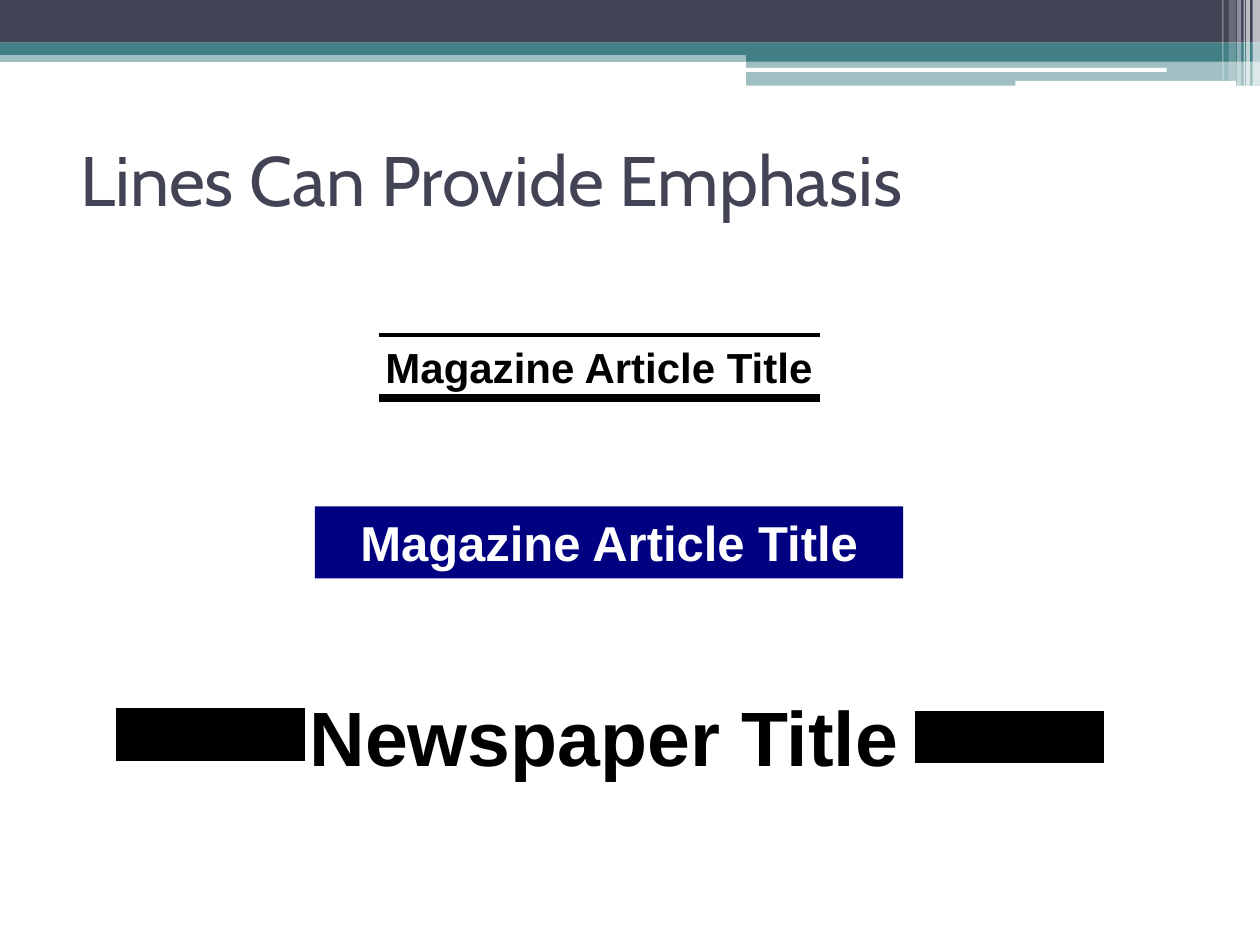
from lxml import etree
from pptx import Presentation
from pptx import util as u
from pptx.dml.color import RGBColor
from pptx.enum import shapes, text
from pptx.oxml.ns import qn

WIDTH, HEIGHT = 25.4, 19.05
SLATE, TEAL, WHITE, BLACK, NAVY = "424456", "438086", "FFFFFF", "000000", "000080"
RECT = shapes.MSO_SHAPE.RECTANGLE
ROUNDED = shapes.MSO_SHAPE.ROUNDED_RECTANGLE

HEADER_BARS = [
    (RECT, 0, 1.02, WIDTH, 0.23, TEAL, 50),
    (RECT, 0, 0, WIDTH, 0.86, SLATE, 100),
    (RECT, 0, 0.86, WIDTH, 0.25, TEAL, 100),
    (RECT, 15.04, 0.99, 10.36, 0.25, TEAL, 100),
    (RECT, 15.04, 1.22, 10.36, 0.51, TEAL, 50),
    (ROUNDED, 15.01, 1.37, 8.51, 0.08, WHITE, 100),
    (ROUNDED, 20.47, 1.63, 4.45, 0.1, WHITE, 100),
]
STRIPES = [
    (25.25, 0.15, 1.73, 65),
    (25.12, 0.08, 1.73, 65),
    (25.07, 0.03, 1.73, 60),
    (24.94, 0.08, 1.73, 40),
    (24.77, 0.15, 1.63, 20),
    (24.64, 0.03, 1.63, 30),
]
TITLE = ("Lines Can Provide Emphasis", (1.37, 2.11, 22.86, 2.97))
BANNER = ("Magazine Article Title", (6.35, 10.21, 11.86, 1.45))
RULED_TITLES = [
    {"text": "Magazine Article Title", "at": (7.52, 6.76, 9.53, 1.27), "size": 24,
     "rules": [(7.65, 8.03, 8.89, 4.5), (7.65, 6.76, 8.89, 2.25)]},
    {"text": "Newspaper Title", "at": (5.99, 13.77, 14.17, 2.11), "size": 44,
     "rules": [(2.34, 14.81, 3.81, 30), (18.44, 14.86, 3.81, 30)]},
]


def color(value):
    return RGBColor.from_string(value)


def lengths(*values):
    return [u.Cm(value) for value in values]


def add_bar(page, kind, left, top, width, height, fill, opacity=100):
    bar = page.shapes.add_shape(kind, *lengths(left, top, width, height))
    bar.shadow.inherit = False
    bar.fill.solid()
    bar.fill.fore_color.rgb = color(fill)
    bar.line.fill.background()
    if opacity < 100:
        tint = bar.fill._xPr.find(".//" + qn("a:srgbClr"))
        etree.SubElement(tint, qn("a:alpha"), val=str(opacity * 1000))
    return bar


def write(box, content, *, size, fill=BLACK, font="Arial", bold=True,
          align=text.PP_ALIGN.LEFT, anchor=text.MSO_ANCHOR.TOP, grow=True, before=0.1):
    frame = box.text_frame
    frame.word_wrap = True
    frame.vertical_anchor = anchor
    frame.auto_size = text.MSO_AUTO_SIZE.SHAPE_TO_FIT_TEXT if grow else text.MSO_AUTO_SIZE.NONE
    para = frame.paragraphs[0]
    para.alignment = align
    para.space_before = u.Pt(size * before)
    span = para.add_run()
    span.text = content
    span.font.name = font
    span.font.size = u.Pt(size)
    span.font.bold = bold
    span.font.color.rgb = color(fill)


def add_rule(group, left, top, width, weight):
    rule = group.shapes.add_connector(
        shapes.MSO_CONNECTOR.STRAIGHT, *lengths(left, top, left + width, top))
    rule.line.color.rgb = color(BLACK)
    rule.line.width = u.Pt(weight)
    etree.SubElement(rule._element.spPr, qn("a:effectLst"))


def add_ruled_title(page, title):
    group = page.shapes.add_group_shape()
    box = group.shapes.add_textbox(*lengths(*title["at"]))
    write(box, title["text"], size=title["size"])
    for rule in title["rules"]:
        add_rule(group, *rule)


def main():
    deck = Presentation()
    deck.slide_width, deck.slide_height = lengths(WIDTH, HEIGHT)
    page = deck.slides.add_slide(deck.slide_layouts[6])

    for bar in HEADER_BARS:
        add_bar(page, *bar)
    for left, width, height, opacity in STRIPES:
        add_bar(page, RECT, left, 0, width, height, WHITE, opacity)

    heading, place = TITLE
    write(page.shapes.add_textbox(*lengths(*place)), heading, size=40, fill=SLATE,
          font="Cabin", bold=False, anchor=text.MSO_ANCHOR.MIDDLE, grow=False, before=0)

    magazine, newspaper = RULED_TITLES
    add_ruled_title(page, magazine)
    label, place = BANNER
    write(add_bar(page, RECT, *place, NAVY), label, size=28, fill=WHITE,
          align=text.PP_ALIGN.CENTER)
    add_ruled_title(page, newspaper)

    deck.save("out.pptx")


if __name__ == "__main__":
    main()
